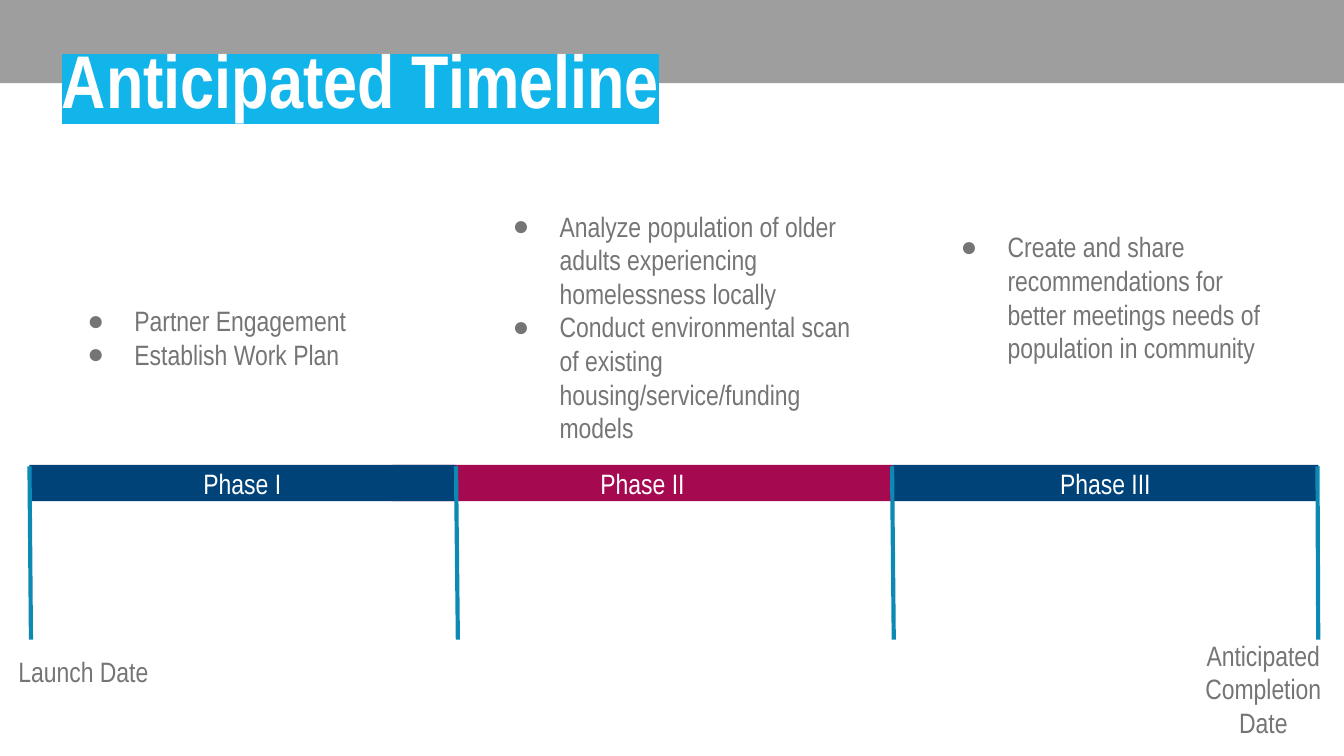
from lxml import etree
from pptx import Presentation
from pptx.dml.color import RGBColor
from pptx.enum import shapes, text
from pptx.oxml import ns
from pptx.util import Pt

HUES = {"band": "9E9E9E", "mark": "12B5EA", "navy": "004379", "plum": "A50A51",
        "teal": "0D8AB3", "grey": "757575", "white": "FFFFFF"}
FONT = "Arial Narrow"
MID, TOP = text.MSO_ANCHOR.MIDDLE, text.MSO_ANCHOR.TOP
LEFT, CENTER = text.PP_ALIGN.LEFT, text.PP_ALIGN.CENTER


def hue(name):
    return RGBColor.from_string(HUES[name])


def sub(parent, tag, **attrs):
    return etree.SubElement(parent, ns.qn(tag), attrs)


def write(shape, lines, size=15, color="grey", bold=False, align=CENTER,
          anchor=TOP, mark=None, bullet=None):
    """Fill a shape with one paragraph per line."""
    frame = shape.text_frame
    frame.word_wrap = True
    frame.auto_size = text.MSO_AUTO_SIZE.NONE
    frame.vertical_anchor = anchor
    frame.margin_left = frame.margin_right = Pt(7.2)
    frame.margin_top = frame.margin_bottom = Pt(7.2)
    for i, line in enumerate(lines):
        para = frame.add_paragraph() if i else frame.paragraphs[0]
        para.alignment = align
        para.space_before = para.space_after = Pt(0)
        para.line_spacing = 1.0
        run = para.add_run()
        run.text = line
        font = run.font
        font.name, font.size, font.bold = FONT, Pt(size), bold
        font.color.rgb = hue(color)
        if mark:
            glow = etree.Element(ns.qn("a:highlight"))
            sub(glow, "a:srgbClr", val=HUES[mark])
            font._element.find(ns.qn("a:solidFill")).addnext(glow)
        if bullet:
            props = para._p.get_or_add_pPr()
            props.set("marL", str(Pt(36)))
            props.set("indent", str(-Pt(25.2)))
            sub(sub(props, "a:buClr"), "a:srgbClr", val=HUES[color])
            sub(props, "a:buFont", typeface="Arial")
            sub(props, "a:buChar", char=bullet)


class Deck:
    def __init__(self, wide, high):
        self.prs = Presentation()
        self.prs.slide_width, self.prs.slide_height = Pt(wide), Pt(high)

    def start(self, layout):
        self.slide = self.prs.slides.add_slide(self.prs.slide_layouts[layout])
        self.free = list(self.slide.placeholders)

    def holder(self, box, lines, **style):
        """Take the next template placeholder, move it and fill it."""
        shape = self.free.pop(0)
        shape.left, shape.top, shape.width, shape.height = map(Pt, box)
        write(shape, lines, align=LEFT, **style)

    def bar(self, box, fill, label=None):
        shape = self.slide.shapes.add_shape(
            shapes.MSO_SHAPE.RECTANGLE, *map(Pt, box))
        shape.shadow.inherit = False
        shape.fill.solid()
        shape.fill.fore_color.rgb = hue(fill)
        shape.line.fill.background()
        if label:
            write(shape, [label], color="white", anchor=MID)
        return shape

    def line(self, *ends):
        line = self.slide.shapes.add_connector(
            shapes.MSO_CONNECTOR.STRAIGHT, *map(Pt, ends))
        line.line.color.rgb = hue("teal")
        line.line.width = Pt(2.25)
        sub(line._element.spPr, "a:effectLst")

    def note(self, box, line):
        write(self.slide.shapes.add_textbox(*map(Pt, box)), [line])

    def save(self):
        for shape in self.free:
            shape._element.getparent().remove(shape._element)
        self.prs.save("out.pptx")


def main():
    deck = Deck(720, 405)
    deck.start(4)

    # Header band, behind the title
    band = deck.bar((0, 0, 720, 44.6), "band")
    deck.slide.shapes._spTree.insert(2, band._element)
    deck.holder((26, 7.2, 668, 69.8), ["Anticipated Timeline"], size=40,
                color="white", bold=True, anchor=MID, mark="mark")

    # Steps above each phase
    steps = [
        ((28.8, 121.7, 200, 118), MID,
         ["Partner Engagement", "Establish Work Plan"]),
        ((256.6, 116, 211, 118), MID,
         ["Analyze population of older adults experiencing homelessness locally",
          "Conduct environmental scan of existing housing/service/funding models"]),
        ((496.6, 116, 200, 118), TOP,
         ["Create and share recommendations for better meetings needs of "
          "population in community"]),
    ]
    for box, anchor, lines in steps:
        deck.holder(box, lines, anchor=anchor, bullet="●")

    # Phase bars; the first overlaps the second
    for x, wide, fill, label in [(210.3, 267.8, "plum", "Phase II"),
                                 (478.1, 228.2, "navy", "Phase III"),
                                 (15.8, 228.2, "navy", "Phase I")]:
        deck.bar((x, 249.1, wide, 19.4), fill, label)

    # Milestone lines
    for low, high in [(16.6, 15.8), (245.3, 244.3), (478.8, 477.9), (706.2, 705.8)]:
        deck.line(low, 342.7, high, 249.8)

    # Date labels
    deck.note((-4.3, 343.4, 98, 47.5), "Launch Date")
    deck.note((627.8, 334.8, 98, 47.5), "Anticipated Completion Date")

    deck.save()


if __name__ == "__main__":
    main()
